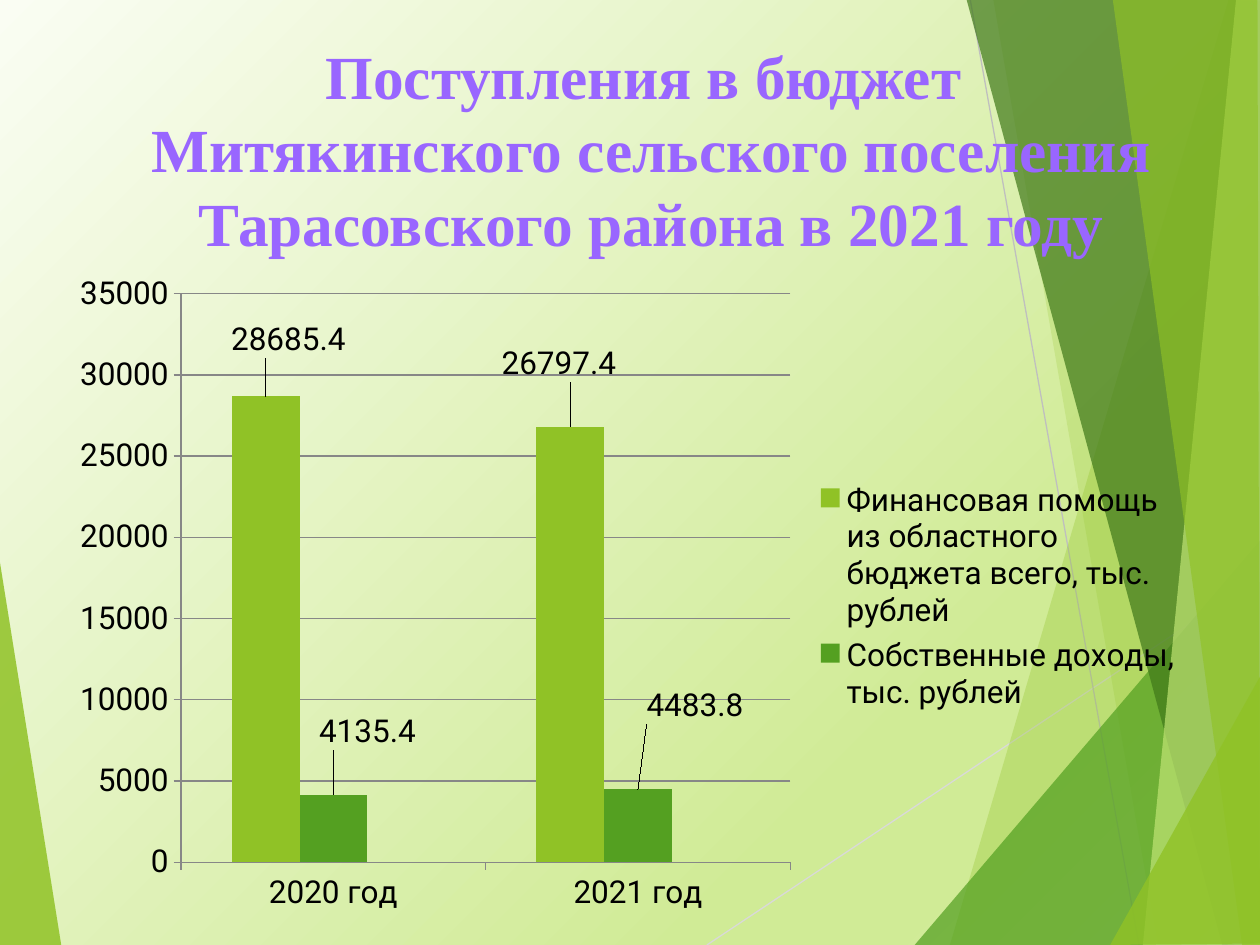
from lxml import etree
from pptx import Presentation, util as u
from pptx.chart.data import CategoryChartData
from pptx.dml.color import RGBColor
from pptx.enum import chart as charts, shapes, text
from pptx.oxml import parse_xml
from pptx.oxml.ns import nsdecls, qn

Cm = u.Cm
COLORS = {
    "lime": "90C226", "green": "54A021", "forest": "3F7819", "pale": "C0E474",
    "gold": "E6B91E", "violet": "9966FF", "black": "000000", "grid": "878787",
    "light_gray": "D9D9D9", "gray": "BFBFBF",
}


def rgb(name):
    return RGBColor.from_string(COLORS[name])


def add_layout(parent, index, **values):
    layout = parse_xml(f'<c:layout {nsdecls("c")}><c:manualLayout/></c:layout>')
    for tag, value in values.items():
        etree.SubElement(layout[0], qn(f"c:{tag}")).set("val", str(value))
    parent.insert(index, layout)


presentation = Presentation()
presentation.slide_width, presentation.slide_height = Cm(25.4), Cm(19.05)
slide = presentation.slides.add_slide(presentation.slide_layouts[6])

background = slide.background.fill
background.gradient()
gradient = slide.background._cSld.find(".//" + qn("a:gradFill"))
for child in list(gradient):
    gradient.remove(child)
stops = etree.SubElement(gradient, qn("a:gsLst"))
for position, color in ((0, "FAFDF3"), (74, "D0EB96"), (83, "D0EB96"), (100, "DFF1B9")):
    stop = etree.SubElement(stops, qn("a:gs"), pos=str(position * 1000))
    etree.SubElement(stop, qn("a:srgbClr"), val=color)
etree.SubElement(gradient, qn("a:lin"), ang="2700000", scaled="0")

rays = [
    ("light_gray", (14.25, 19.05, 25.43, 11.61)),
    ("gray", (19.56, 0, 22.96, 19.05)),
]
facets = [
    ("lime", 85, [(-0.03, 11.15), (1.24, 19.08), (-0.03, 19.05)]),
    ("lime", 30, [(24.77, 0), (19.15, 19.05), (25.45, 19.08), (25.43, 0.03)]),
    ("lime", 20, [(20.02, -0.03), (23.34, 19.05), (25.43, 19.05), (25.43, -0.03)]),
    ("green", 72, [(18.44, 19.05), (25.4, 10.9), (25.43, 19.05)]),
    ("forest", 70, [(19.48, -0.03), (24.64, 19.05), (25.43, 19.02), (25.43, -0.03)]),
    ("pale", 70, [(24.92, -0.03), (23.04, 19.05), (25.43, 19.05), (25.4, -0.03)]),
    ("lime", 65, [(22.43, -0.03), (25.04, 19.05), (25.4, 19.05), (25.35, -0.03)]),
    ("lime", 80, [(22.38, 19.05), (25.43, 13.59), (25.43, 19.02)]),
]
for color, ends in rays:
    ray = slide.shapes.add_connector(shapes.MSO_CONNECTOR.STRAIGHT, *map(Cm, ends))
    ray.line.color.rgb = rgb(color)
    ray.line.width = u.Pt(0.75)
    etree.SubElement(ray._element.spPr, qn("a:effectLst"))
for color, opacity, points in facets:
    corners = [(Cm(x), Cm(y)) for x, y in points]
    builder = slide.shapes.build_freeform(*corners[0])
    builder.add_line_segments(corners[1:], close=True)
    facet = builder.convert_to_shape()
    facet.shadow.inherit = False
    facet.line.fill.background()
    facet.fill.solid()
    facet.fill.fore_color.rgb = rgb(color)
    fill_color = facet._element.spPr.find(".//" + qn("a:srgbClr"))
    etree.SubElement(fill_color, qn("a:alpha"), val=str(opacity * 1000))

title = slide.shapes.add_textbox(Cm(1.7), Cm(0.64), Cm(22.86), Cm(3.18))
title.text_frame.word_wrap = True
title.text_frame.vertical_anchor = text.MSO_ANCHOR.TOP
title.text_frame.text = (
    "Поступления в бюджет \n"
    "Митякинского сельского поселения Тарасовского района в 2021 году"
)
title_format = {"name": "Times New Roman", "size": u.Pt(35), "bold": True}
for paragraph in title.text_frame.paragraphs:
    paragraph.alignment = text.PP_ALIGN.CENTER
    font = paragraph.runs[0].font
    for key, value in title_format.items():
        setattr(font, key, value)
    font.color.rgb = rgb("violet")

income = [
    ("Финансовая помощь из областного бюджета всего, тыс. рублей",
     (28685.4, 26797.4), "lime", ((0.02, -0.05), (-0.01, -0.06))),
    ("Собственные доходы, тыс. рублей",
     (4135.4, 4483.8), "green", ((0.03, -0.06), (0.05, -0.09))),
    ("Series 3", (None, None), "gold", ()),
]
data = CategoryChartData()
data.categories = ["2020 год", "2021 год"]
for name, values, color, offsets in income:
    data.add_series(name, values)
chart = slide.shapes.add_chart(
    charts.XL_CHART_TYPE.COLUMN_CLUSTERED, Cm(1.17), Cm(5.28), Cm(22.96), Cm(13.36), data
).chart
chart.has_title = False
for key, value in {"name": "Roboto", "size": u.Pt(18)}.items():
    setattr(chart.font, key, value)
chart.font.color.rgb = rgb("black")

plot = chart.plots[0]
for key, value in {"gap_width": 150, "overlap": 0, "vary_by_categories": False}.items():
    setattr(plot, key, value)
for series, (name, values, color, offsets) in zip(plot.series, income):
    series.format.fill.solid()
    series.format.fill.fore_color.rgb = rgb(color)
    for index, (x, y) in enumerate(offsets):
        label = series.points[index].data_label
        label.position = charts.XL_LABEL_POSITION.OUTSIDE_END
        add_layout(series._element.findall(".//" + qn("c:dLbl"))[index], 1, x=x, y=y)

for axis in (chart.category_axis, chart.value_axis):
    axis.major_tick_mark = charts.XL_TICK_MARK.OUTSIDE
    axis.format.line.color.rgb = rgb("grid")
value_format = {"minimum_scale": 0, "maximum_scale": 35000, "major_unit": 5000}
for key, value in value_format.items():
    setattr(chart.value_axis, key, value)
chart.value_axis.major_gridlines.format.line.color.rgb = rgb("grid")

plot_area = chart._chartSpace.chart.plotArea
for layout in plot_area.findall(qn("c:layout")):
    plot_area.remove(layout)
add_layout(plot_area, 0, layoutTarget="inner", xMode="edge", yMode="edge",
           x=0.108, y=0.048, w=0.535, h=0.858)

chart.has_legend = True
legend = chart.legend
legend.position = charts.XL_LEGEND_POSITION.RIGHT
legend.include_in_layout = False
for layout in legend._element.findall(qn("c:layout")):
    legend._element.remove(layout)
hidden = parse_xml(
    f'<c:legendEntry {nsdecls("c")}><c:idx val="2"/><c:delete val="1"/></c:legendEntry>'
)
legend._element.insert(1, hidden)
add_layout(legend._element, 2, xMode="edge", yMode="edge", x=0.66, y=0.32, w=0.33, h=0.37)

presentation.save("out.pptx")
